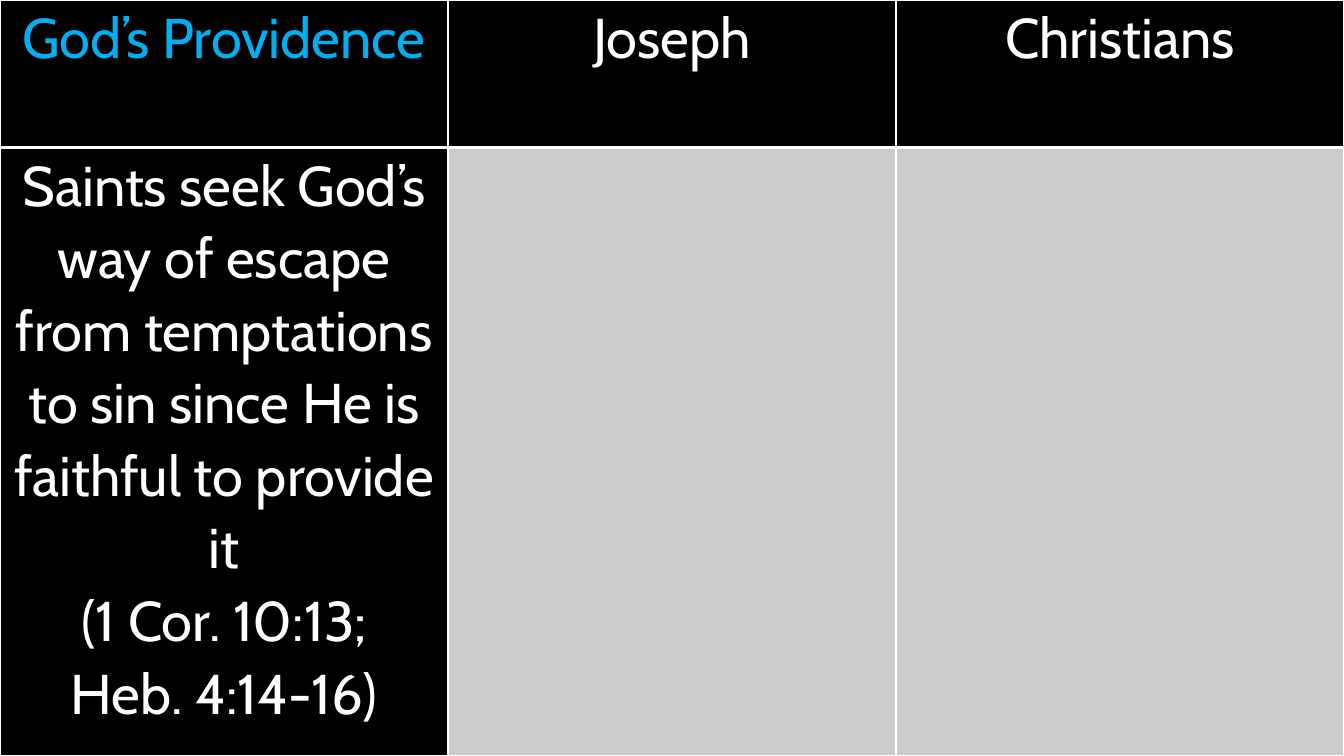
from lxml.etree import SubElement
from pptx import Presentation
from pptx.dml.color import RGBColor
from pptx.enum.text import PP_ALIGN
from pptx.oxml.ns import qn
from pptx.util import Inches, Pt

WIDTH, HEIGHT = Inches(13.33), Inches(7.5)
HEADER_SHARE = 0.195
BLACK, WHITE, GREY, BLUE = "000000", "FFFFFF", "CCCCCC", "00B0F0"
THIN, THICK = 1, 3

HEADINGS = [("God’s Providence", BLUE), ("Joseph", WHITE), ("Christians", WHITE)]
PRINCIPLE = [
    "Saints seek God’s way of escape from temptations to sin "
    "since He is faithful to provide it",
    "(1 Cor. 10:13;",
    "Heb. 4:14-16)",
]


def paint(fill, color):
    fill.solid()
    fill.fore_color.rgb = RGBColor.from_string(color)


def add_borders(cell, top, bottom):
    """Draw white rules round a cell; top and bottom are widths in points."""
    properties = cell._tc.get_or_add_tcPr()
    for side, width in (("L", THIN), ("R", THIN), ("T", top), ("B", bottom)):
        rule = SubElement(properties, qn(f"a:ln{side}"), w=str(Pt(width)))
        solid = SubElement(rule, qn("a:solidFill"))
        SubElement(solid, qn("a:srgbClr"), val=WHITE)


def write_lines(cell, lines, color):
    frame = cell.text_frame
    for index, line in enumerate(lines):
        paragraph = frame.add_paragraph() if index else frame.paragraphs[0]
        paragraph.alignment = PP_ALIGN.CENTER
        paragraph.line_spacing = 1.07
        run = paragraph.add_run()
        run.text = line
        run.font.name = "Cabin"
        run.font.size = Pt(40)
        run.font.bold = False
        run.font.color.rgb = RGBColor.from_string(color)


def format_cell(cell, fill, top, bottom):
    cell.margin_left = cell.margin_right = Inches(0.07)
    cell.margin_top = cell.margin_bottom = 0
    add_borders(cell, top, bottom)
    paint(cell.fill, fill)


def add_comparison(slide):
    columns = len(HEADINGS)
    table = slide.shapes.add_table(2, columns, 0, 0, WIDTH, HEIGHT).table
    table.first_row = table.horz_banding = False
    header_height = int(HEIGHT * HEADER_SHARE)
    table.rows[0].height = header_height
    table.rows[1].height = HEIGHT - header_height
    for column, (heading, color) in enumerate(HEADINGS):
        table.columns[column].width = WIDTH // columns
        header, body = table.cell(0, column), table.cell(1, column)
        format_cell(header, BLACK, THIN, THICK)
        format_cell(body, GREY if column else BLACK, THICK, THIN)
        write_lines(header, [heading], color)
    write_lines(table.cell(1, 0), PRINCIPLE, WHITE)


def main():
    presentation = Presentation()
    presentation.slide_width, presentation.slide_height = WIDTH, HEIGHT
    slide = presentation.slides.add_slide(presentation.slide_layouts[6])
    paint(slide.background.fill, BLACK)
    add_comparison(slide)
    presentation.save("out.pptx")


if __name__ == "__main__":
    main()
